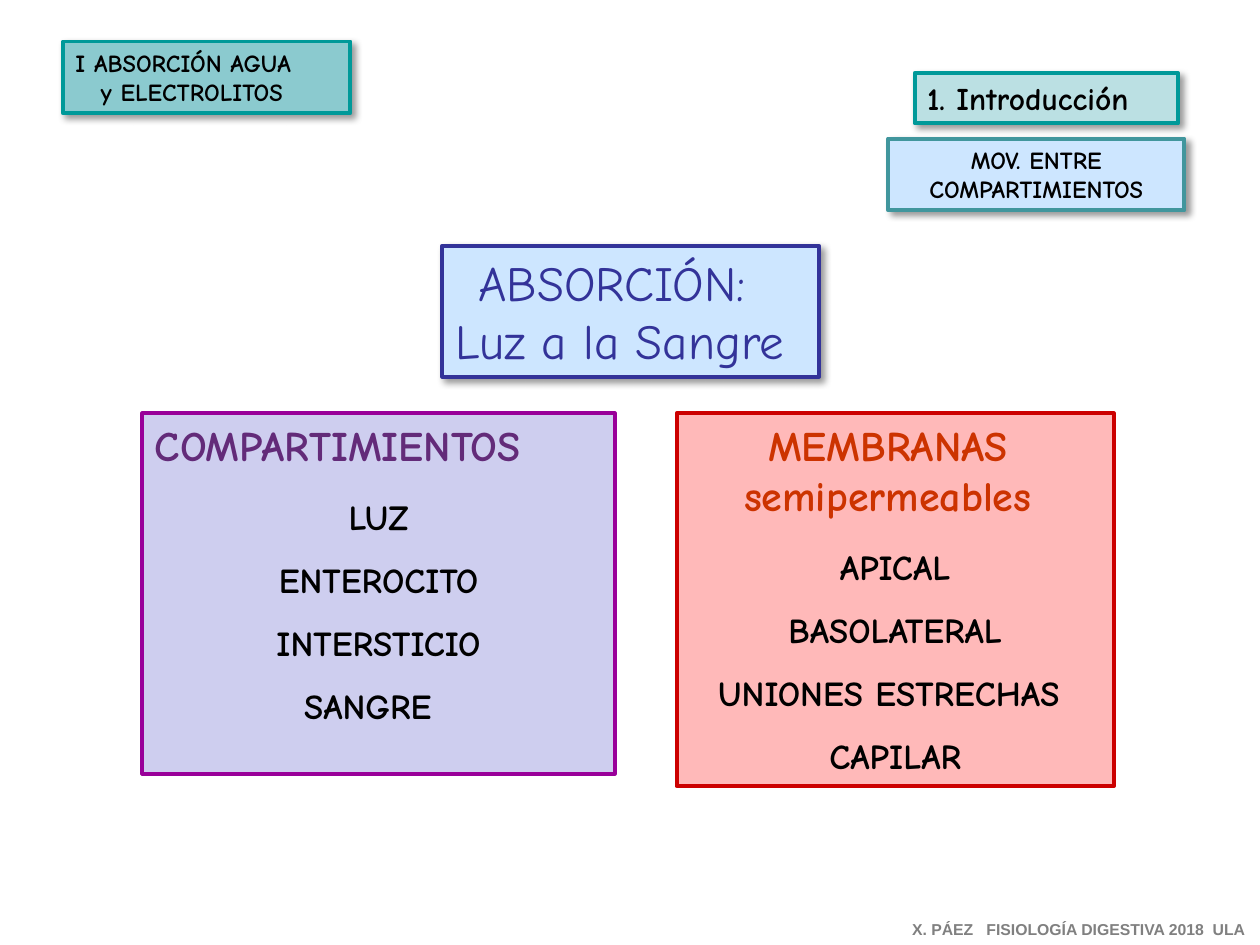
from dataclasses import dataclass

from lxml import etree
from pptx import Presentation
from pptx import util as u
from pptx.dml.color import RGBColor
from pptx.enum import shapes, text
from pptx.oxml.ns import qn

LEFT, CENTER = text.PP_ALIGN.LEFT, text.PP_ALIGN.CENTER


@dataclass(frozen=True)
class Theme:
    font: str = "Comic Neue"
    footer_font: str = "Arial"
    # Type sizes
    title: int = 28
    heading: int = 24
    item: int = 20
    section: int = 18
    tag: int = 14
    footer: int = 9
    # Text colours
    black: str = "000000"
    navy: str = "333399"
    purple: str = "632B79"
    orange: str = "CC3300"
    gray: str = "808080"
    # Fill and line colours
    sky: str = "CDE6FF"
    lilac: str = "CECEEF"
    violet: str = "990099"
    pink: str = "FFB9B9"
    red: str = "CC0000"
    aqua: str = "8BCACF"
    pale_aqua: str = "BBE0E3"
    teal: str = "009999"
    dull_teal: str = "41969D"


class SlideBuilder:
    def __init__(self, s, theme):
        self.s, self.t = s, theme

    def place(self, sp, at):
        sp.left, sp.top, sp.width, sp.height = map(u.Inches, at)

    def frame(self, sp, fill, line, shadow=True):
        """Fill, outline and optional soft shadow of a box."""
        sp.fill.solid()
        sp.fill.fore_color.rgb = RGBColor.from_string(fill)
        sp.line.color.rgb = RGBColor.from_string(line)
        sp.line.width = u.Pt(2.25)
        sp.shadow.inherit = False
        if shadow:
            effects = sp._element.spPr.find(qn("a:effectLst"))
            outer = etree.SubElement(
                effects, qn("a:outerShdw"), blurRad=str(u.Pt(4)),
                dist=str(u.Pt(3)), dir=str(45 * 60000), algn="tl", rotWithShape="0")
            color = etree.SubElement(outer, qn("a:srgbClr"), val=self.t.black)
            etree.SubElement(color, qn("a:alpha"), val="40000")

    def clear_frame(self, sp, wrap=True):
        tf = sp.text_frame
        tf.auto_size = text.MSO_AUTO_SIZE.NONE
        tf.word_wrap = wrap
        tf.vertical_anchor = text.MSO_ANCHOR.TOP
        return tf

    def paragraph(self, tf, words, size, color, align=CENTER, bold=True,
                  before=0, left=0, right=0, font=None):
        p = tf.paragraphs[0]
        if p.runs:
            p = tf.add_paragraph()
        p.alignment = align
        p.space_before = u.Pt(before)
        pPr = p._p.get_or_add_pPr()
        for name, inches in (("marL", left), ("marR", right), ("indent", 0)):
            pPr.set(name, str(u.Inches(inches)))
        etree.SubElement(pPr, qn("a:buNone"))
        r = p.add_run()
        r.text = words
        r.font.name = font or self.t.font
        r.font.size = u.Pt(size)
        r.font.bold = bold
        r.font.color.rgb = RGBColor.from_string(color)

    def title(self, lines, at):
        sp = self.s.shapes.title
        self.place(sp, at)
        self.frame(sp, self.t.sky, self.t.navy)
        tf = self.clear_frame(sp)
        for line in lines:
            self.paragraph(tf, line, self.t.title, self.t.navy, bold=False, right=0.17)

    def panel(self, idx, at, fill, line, color, heading, items, align=CENTER, last_right=0):
        """Body placeholder with a coloured heading above spaced items."""
        sp = self.s.placeholders[idx]
        self.place(sp, at)
        self.frame(sp, fill, line, shadow=False)
        tf = self.clear_frame(sp)
        for words in heading:
            self.paragraph(tf, words, self.t.heading, color, align)
        for i, words in enumerate(items):
            self.paragraph(tf, words, self.t.item, self.t.black,
                           before=12 if i else 14.5,
                           right=last_right if i == len(items) - 1 else 0)

    def tag(self, at, fill, line, size, lines, align=LEFT):
        """Shadowed label; each line is (words, left indent)."""
        sp = self.s.shapes.add_shape(shapes.MSO_SHAPE.RECTANGLE, *map(u.Inches, at))
        self.frame(sp, fill, line)
        tf = self.clear_frame(sp)
        for words, left in lines:
            self.paragraph(tf, words, size, self.t.black, align, left=left)

    def footer(self, words, at):
        sp = self.s.shapes.add_textbox(*map(u.Inches, at))
        tf = self.clear_frame(sp, wrap=False)
        self.paragraph(tf, words, self.t.footer, self.t.gray, LEFT,
                       font=self.t.footer_font)


def main():
    prs = Presentation()
    prs.slide_width, prs.slide_height = u.Inches(10), u.Inches(7.5)
    t = Theme()
    b = SlideBuilder(prs.slides.add_slide(prs.slide_layouts[3]), t)

    # Compartments and membranes
    b.panel(1, (1.13, 3.28, 3.75, 2.86), t.lilac, t.violet, t.purple,
            ["COMPARTIMIENTOS"], ["LUZ", "ENTEROCITO", "INTERSTICIO", "SANGRE"],
            align=LEFT, last_right=0.17)
    b.panel(2, (5.37, 3.28, 3.47, 2.96), t.pink, t.red, t.orange,
            ["MEMBRANAS ", "semipermeables "],
            ["APICAL", "BASOLATERAL", "UNIONES ESTRECHAS ", "CAPILAR"])

    # Central title
    b.title(["ABSORCIÓN: ", "Luz a la Sangre"], (3.51, 1.95, 2.99, 1.04))

    # Section labels
    b.tag((0.5, 0.33, 2.28, 0.57), t.aqua, t.teal, t.tag,
          [("I ABSORCIÓN AGUA", 0), ("y ELECTROLITOS", 0.2)])
    b.tag((7.26, 0.58, 2.09, 0.4), t.pale_aqua, t.teal, t.section,
          [("1. Introducción", 0)])
    b.tag((7.05, 1.1, 2.35, 0.57), t.sky, t.dull_teal, t.tag,
          [("MOV. ENTRE COMPARTIMIENTOS", 0)], align=CENTER)

    # Credit line
    b.footer("X. PÁEZ   FISIOLOGÍA DIGESTIVA 2018  ULA", (7.14, 7.25, 2.86, 0.25))

    prs.save("out.pptx")


if __name__ == "__main__":
    main()
